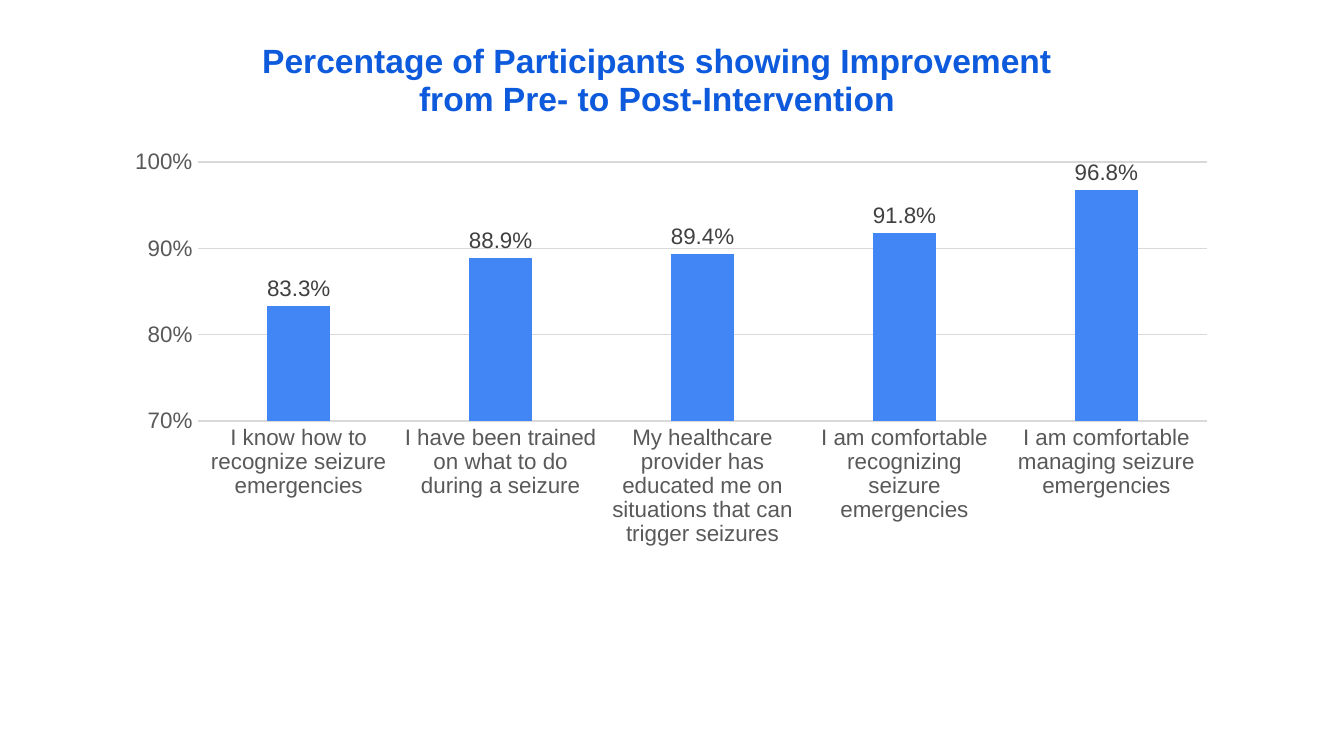
import pptx
import pptx.util
import pptx.dml.color
import pptx.chart.data
import pptx.enum.chart
import pptx.oxml
import pptx.oxml.ns

Pt = pptx.util.Pt
enum = pptx.enum.chart
qn = pptx.oxml.ns.qn


def tint(color, code):
    color.rgb = pptx.dml.color.RGBColor.from_string(code)


def place(part, index, **spots):
    for old in part.findall(qn("c:layout")):
        part.remove(old)
    inner = '<c:layoutTarget val="inner"/>' if "w" in spots else ""
    modes = "".join(f'<c:{key}Mode val="edge"/>' for key in "xy")
    sizes = "".join(f'<c:{key} val="{val}"/>' for key, val in spots.items())
    part.insert(index, pptx.oxml.parse_xml(
        f'<c:layout {pptx.oxml.ns.nsdecls("c")}><c:manualLayout>'
        f'{inner}{modes}{sizes}</c:manualLayout></c:layout>'))


deck = pptx.Presentation()
deck.slide_width, deck.slide_height = Pt(720), Pt(405)
slide = deck.slides.add_slide(deck.slide_layouts[6])

data = pptx.chart.data.CategoryChartData(number_format="0.0%")
data.categories = [
    "I know how to recognize seizure emergencies",
    "I have been trained on what to do during a seizure",
    "My healthcare provider has educated me on situations that can trigger seizures",
    "I am comfortable recognizing seizure emergencies",
    "I am comfortable managing seizure emergencies",
]
data.add_series("Series 1", [0.833, 0.889, 0.894, 0.918, 0.968])
chart = slide.shapes.add_chart(
    enum.XL_CHART_TYPE.COLUMN_CLUSTERED,
    Pt(60.5), Pt(16.5), Pt(598.3), Pt(281.5), data).chart
chart.has_legend = False
chart.font.name = "Arial"
chart.font.size = Pt(10)
tint(chart.font.color, "000000")

frame = chart.chart_title.text_frame
frame.text = ("Percentage of Participants showing Improvement\n"
              "from Pre- to Post-Intervention")
for line in frame.paragraphs:
    line.font.name = "Arial"
    line.font.size = Pt(18)
    line.font.bold = True
    tint(line.font.color, "0D5BDC")
place(chart.chart_title._element, 1, x=0.13, y=0.01)
place(chart._chartSpace.chart.plotArea, 0, x=0.076, y=0.25, w=0.904, h=0.493)

plot = chart.plots[0]
plot.gap_width = 219
plot.overlap = -27
plot.vary_by_categories = False
bars = plot.series[0].format.fill
bars.solid()
tint(bars.fore_color, "4285F4")

plot.has_data_labels = True
labels = plot.data_labels
labels.show_value = True
labels.number_format = "0.0%"
labels.number_format_is_linked = False
labels.position = enum.XL_LABEL_POSITION.OUTSIDE_END

across, up = chart.category_axis, chart.value_axis
for part, code in (across.tick_labels, "595959"), (up.tick_labels, "595959"), (labels, "404040"):
    part.font.name = "Arial"
    part.font.size = Pt(12)
    tint(part.font.color, code)
for axis in across, up:
    axis.major_tick_mark = axis.minor_tick_mark = enum.XL_TICK_MARK.NONE
up.minimum_scale, up.maximum_scale, up.major_unit = 0.7, 1, 0.1
up.tick_labels.number_format = "0%"
up.tick_labels.number_format_is_linked = False
up.format.line.fill.background()
for rule in across.format.line, up.major_gridlines.format.line:
    rule.width = Pt(0.75)
    tint(rule.color, "D9D9D9")

deck.save("out.pptx")
